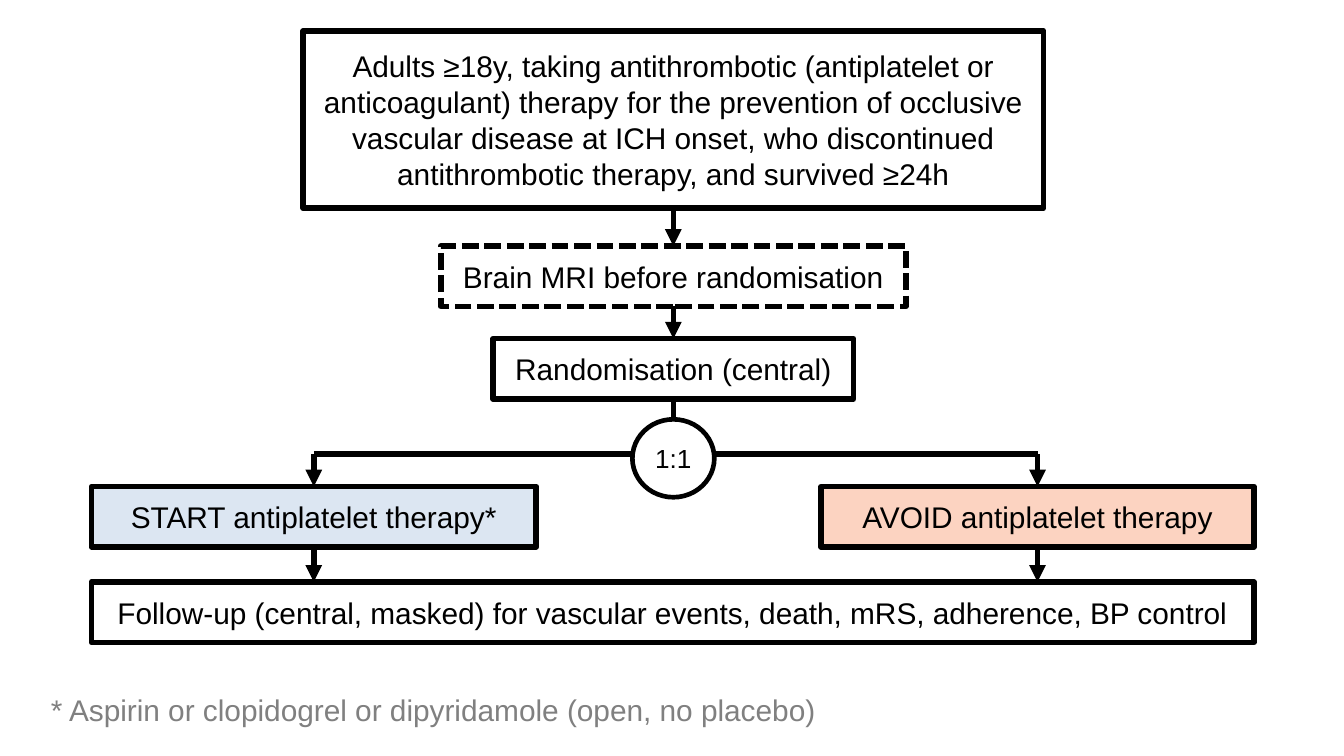
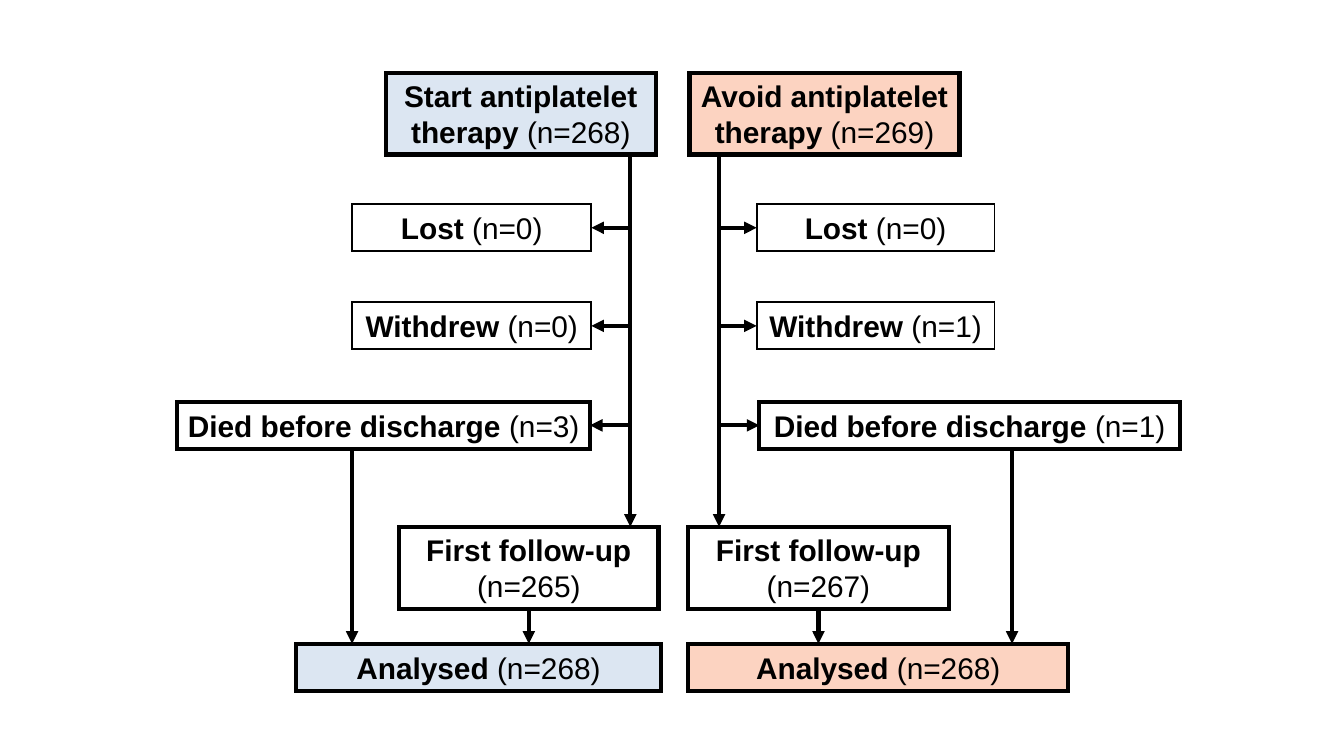
import pptx
import pptx.dml.color
import pptx.enum.dml
import pptx.enum.shapes
import pptx.enum.text
import pptx.oxml.ns
import pptx.util
from lxml import etree
from pptx.util import Inches

BLACK = pptx.dml.color.RGBColor(0x00, 0x00, 0x00)
WHITE = pptx.dml.color.RGBColor(0xFF, 0xFF, 0xFF)
GREY = pptx.dml.color.RGBColor(0x80, 0x80, 0x80)
START_BLUE = pptx.dml.color.RGBColor(0xDC, 0xE6, 0xF2)
AVOID_PINK = pptx.dml.color.RGBColor(0xFC, 0xD3, 0xC1)

FONT = "Arial"
BODY_SIZE = 16
DESIGN_LINE = 3
FLOW_LINE = 2.25
THIN_LINE = 1
TOP, LEFT, BOTTOM, RIGHT = range(4)
DESIGN_INSETS = (0.1, 0.05)
FLOW_INSETS = (0.07, 0.04)

# Rows of the participant flow: top and height within an arm, line width
FLOW_ROWS = {
    "Lost": (0.98, 0.35, THIN_LINE),
    "Withdrew": (1.71, 0.35, THIN_LINE),
    "Died before discharge": (2.45, 0.35, FLOW_LINE),
    "First follow-up": (3.38, 0.61, FLOW_LINE),
    "Analysed": (4.25, 0.35, FLOW_LINE),
}
EXITS = ("Lost", "Withdrew", "Died before discharge")
TRUNK_GAP = 0.23


def add_to(parent, tag, **attributes):
    return etree.SubElement(parent, pptx.oxml.ns.qn(tag), attributes)


def style_run(run, size=BODY_SIZE, color=BLACK, bold=False):
    run.font.name = FONT
    run.font.size = pptx.util.Pt(size)
    run.font.color.rgb = color
    run.font.bold = bold


def draw_box(slide, box, parts, fill=None, line=DESIGN_LINE, size=BODY_SIZE,
             insets=DESIGN_INSETS, ellipse=False):
    """Draw an outlined box; parts is a list of (text, bold)."""
    kinds = pptx.enum.shapes.MSO_SHAPE
    shape = slide.shapes.add_shape(
        kinds.OVAL if ellipse else kinds.RECTANGLE, *map(Inches, box))
    shape.shadow.inherit = False
    if fill is None:
        shape.fill.background()
    else:
        shape.fill.solid()
        shape.fill.fore_color.rgb = fill
    shape.line.color.rgb = BLACK
    shape.line.width = pptx.util.Pt(line)

    frame = shape.text_frame
    frame.word_wrap = True
    frame.vertical_anchor = pptx.enum.text.MSO_ANCHOR.MIDDLE
    frame.margin_left = frame.margin_right = Inches(insets[0])
    frame.margin_top = frame.margin_bottom = Inches(insets[1])
    paragraph = frame.paragraphs[0]
    paragraph.alignment = pptx.enum.text.PP_ALIGN.CENTER
    for text, bold in parts:
        run = paragraph.add_run()
        run.text = text
        style_run(run, size, bold=bold)
    return shape


def draw_line(slide, start, end, width, arrow=True):
    """Join two places; each is a point (x, y) or a (shape, side)."""
    def is_point(place):
        return isinstance(place[0], (int, float))

    points = [tuple(map(Inches, place)) if is_point(place) else (0, 0)
              for place in (start, end)]
    connector = slide.shapes.add_connector(
        pptx.enum.shapes.MSO_CONNECTOR.STRAIGHT, *points[0], *points[1])
    if not is_point(start):
        connector.begin_connect(*start)
    if not is_point(end):
        connector.end_connect(*end)
    connector.line.color.rgb = BLACK
    connector.line.width = pptx.util.Pt(width)
    if arrow:
        add_to(connector.get_or_add_ln(), "a:tailEnd", type="triangle")
    add_to(connector._element.spPr, "a:effectLst")


def middle_of(shape):
    """Centre of a shape in inches."""
    return ((shape.left + shape.width / 2) / Inches(1),
            (shape.top + shape.height / 2) / Inches(1))


def treatment_arms(slide, left, top, width):
    """Branch line, both treatment boxes and the shared follow-up box."""
    box_top, box_height, follow_up_top = top + 0.24, 0.45, top + 0.95
    start_width, avoid_width = 3.31, 3.22
    start_box = draw_box(slide, (left, box_top, start_width, box_height),
                         [("START antiplatelet therapy*", False)], START_BLUE)
    avoid_box = draw_box(
        slide, (left + width - avoid_width, box_top, avoid_width, box_height),
        [("AVOID antiplatelet therapy", False)], AVOID_PINK)
    draw_box(slide, (left, follow_up_top, width, box_height),
             [("Follow-up (central, masked) for vascular events, death, mRS, "
               "adherence, BP control", False)], WHITE)

    centers = [middle_of(box)[0] for box in (start_box, avoid_box)]
    draw_line(slide, (centers[0], top), (centers[1], top), DESIGN_LINE, arrow=False)
    for box, center in zip((start_box, avoid_box), centers):
        draw_line(slide, (center, top), (box, TOP), DESIGN_LINE)
        draw_line(slide, (box, BOTTOM), (center, follow_up_top), DESIGN_LINE)


def enrolment_column(slide, center, top):
    """Centred steps from eligibility down to the 1:1 allocation."""
    steps = [
        (0, 5.51, 1.32, None,
         "Adults ≥18y, taking antithrombotic (antiplatelet or anticoagulant) "
         "therapy for the prevention of occlusive vascular disease at ICH onset, "
         "who discontinued antithrombotic therapy, and survived ≥24h"),
        (1.6, 3.46, 0.45, WHITE, "Brain MRI before randomisation"),
        (2.29, 2.68, 0.45, WHITE, "Randomisation (central)"),
    ]
    boxes = [draw_box(slide, (center - width / 2, top + offset, width, height),
                      [(text, False)], fill)
             for offset, width, height, fill, text in steps]
    boxes[1].line.dash_style = pptx.enum.dml.MSO_LINE.SQUARE_DOT
    for upper, lower in zip(boxes, boxes[1:]):
        draw_line(slide, (upper, BOTTOM), (lower, TOP), DESIGN_LINE)

    ratio_width = 0.61
    ratio = draw_box(
        slide, (center - ratio_width / 2, top + 2.89, ratio_width, 0.58),
        [("1:1", False)], WHITE, 2.5, 14, (0.04, 0.04), ellipse=True)
    draw_line(slide, (boxes[-1], BOTTOM), (ratio, TOP), DESIGN_LINE, arrow=False)


def footnote(slide, box, text):
    frame = slide.shapes.add_textbox(*map(Inches, box)).text_frame
    frame.word_wrap = True
    frame.text = text
    style_run(frame.paragraphs[0].runs[0], color=GREY)


def flow_arm(slide, inner_edge, top, side, fill, title, heading, rows, death_gap):
    """Participant flow of one arm, growing outwards from inner_edge.

    side is LEFT or RIGHT; heading is (count, gap, width) and rows maps each
    label to the same, where gap is the distance from the inner edge.
    """
    outwards = -1 if side == LEFT else 1
    facing = RIGHT if side == LEFT else LEFT

    def flow_box(label, values, offset, height, line, fill=None):
        count, gap, width = values
        left = inner_edge + outwards * gap - (width if side == LEFT else 0)
        shape = draw_box(slide, (left, top + offset, width, height),
                         [(label + " ", True), (f"(n={count})", False)],
                         fill, line, insets=FLOW_INSETS)
        add_to(shape.get_or_add_ln(), "a:miter", lim="800000")
        return shape

    heading_height = 0.61
    flow_box(title, heading, 0, heading_height, FLOW_LINE, fill)
    boxes = {label: flow_box(label, rows[label], *place,
                             fill if label == "Analysed" else None)
             for label, place in FLOW_ROWS.items()}

    trunk = inner_edge + outwards * TRUNK_GAP
    for label in EXITS:
        draw_line(slide, (trunk, middle_of(boxes[label])[1]),
                  (boxes[label], facing), FLOW_LINE)
    draw_line(slide, (trunk, top + heading_height),
              (trunk, top + FLOW_ROWS["First follow-up"][0]), FLOW_LINE)

    analysed_top = top + FLOW_ROWS["Analysed"][0]
    died_top, died_height, _ = FLOW_ROWS["Died before discharge"]
    death = inner_edge + outwards * death_gap
    draw_line(slide, (death, top + died_top + died_height),
              (death, analysed_top), FLOW_LINE)
    follow_up = boxes["First follow-up"]
    draw_line(slide, (follow_up, BOTTOM),
              (middle_of(follow_up)[0], analysed_top), FLOW_LINE)


def trial_design_slide(slide):
    treatment_arms(slide, left=0.68, top=3.38, width=8.65)
    enrolment_column(slide, center=5.01, top=0.23)
    footnote(slide, (0.28, 5.1, 8.82, 0.47),
             "* Aspirin or clopidogrel or dipyridamole (open, no placebo)")


def participant_flow_slide(slide):
    flow_arm(slide, 4.92, 0.54, LEFT, START_BLUE, "Start antiplatelet therapy",
             (268, 0.04, 2.01),
             {"Lost": (0, 0.52, 1.78),
              "Withdrew": (0, 0.52, 1.78),
              "Died before discharge": (3, 0.53, 3.07),
              "First follow-up": (265, 0.02, 1.93),
              "Analysed": (268, 0, 2.72)}, death_gap=2.3)
    flow_arm(slide, 5.12, 0.54, RIGHT, AVOID_PINK, "Avoid antiplatelet therapy",
             (269, 0.01, 2.01),
             {"Lost": (0, 0.51, 1.77),
              "Withdrew": (1, 0.51, 1.77),
              "Died before discharge": (1, 0.53, 3.13),
              "First follow-up": (267, 0, 1.94),
              "Analysed": (268, 0, 2.83)}, death_gap=2.41)


def main():
    presentation = pptx.Presentation()
    presentation.slide_width = Inches(10)
    presentation.slide_height = Inches(10 * 9 / 16)
    blank = presentation.slide_layouts[6]
    for build in (trial_design_slide, participant_flow_slide):
        build(presentation.slides.add_slide(blank))
    presentation.save("out.pptx")


if __name__ == "__main__":
    main()
